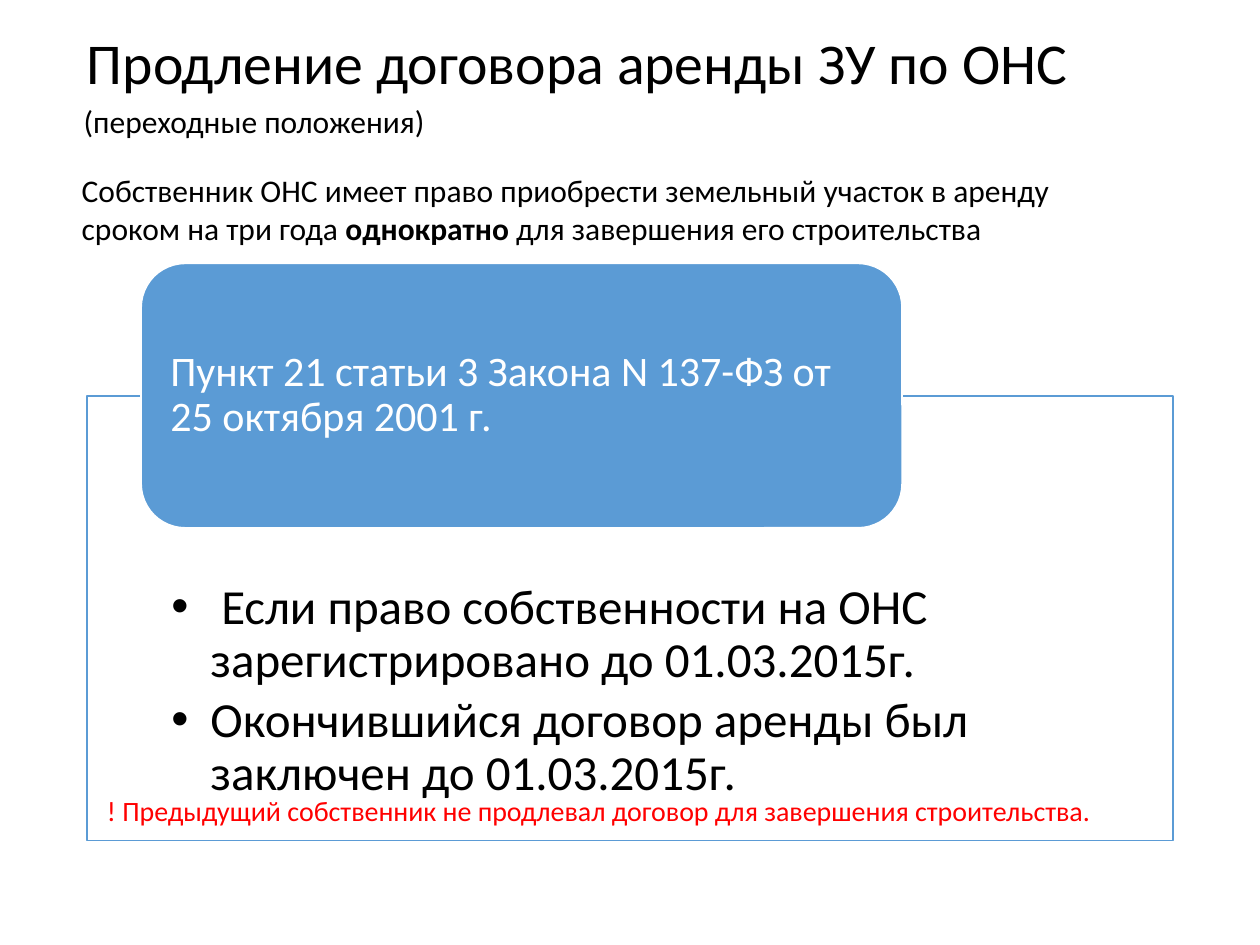
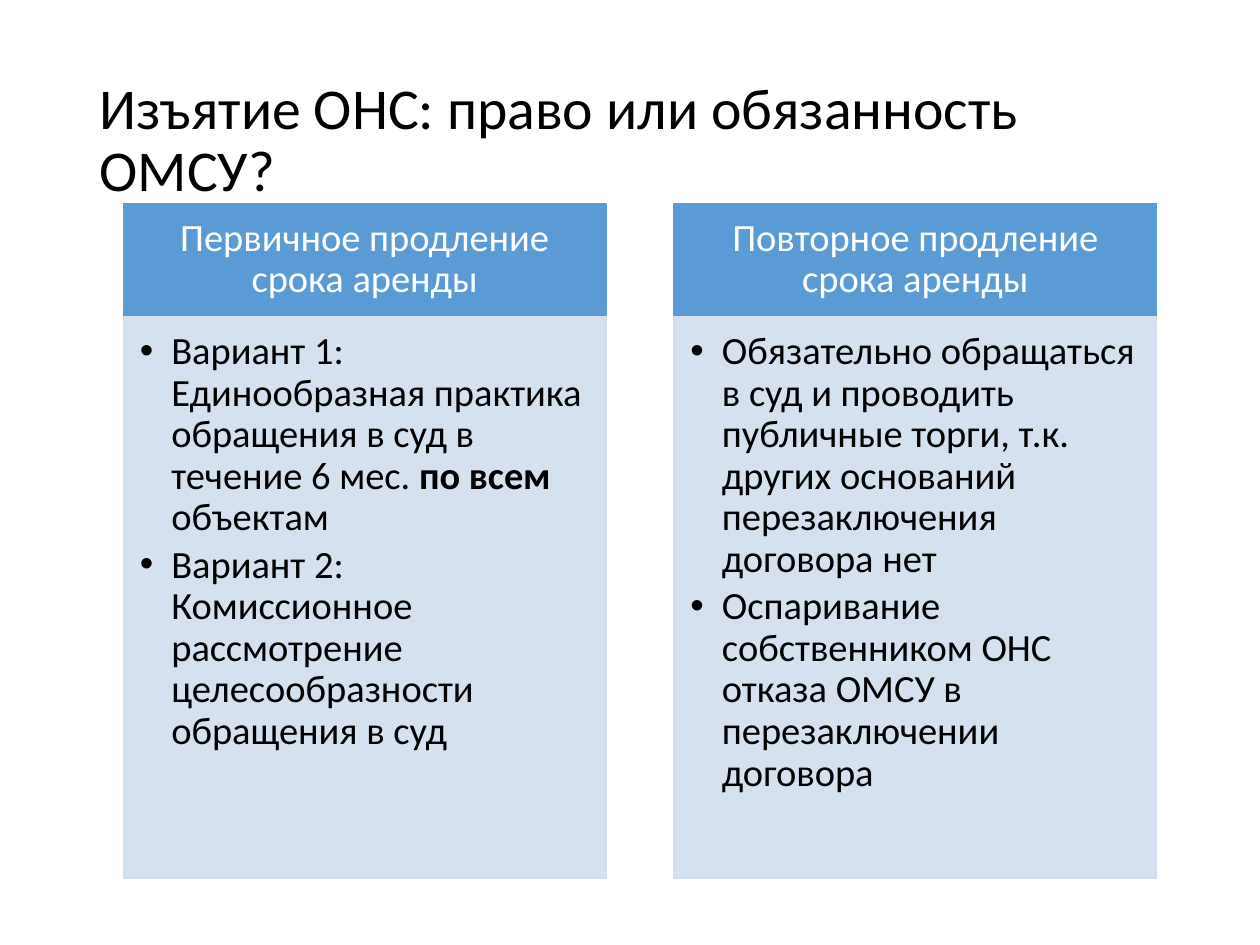
from dataclasses import dataclass
from typing import NamedTuple

from lxml import etree
from pptx import Presentation
from pptx import util as u
from pptx.dml.color import RGBColor
from pptx.enum import shapes, text
from pptx.oxml.ns import qn

FONT = "Calibri"
BLACK, WHITE, RED = "000000", "FFFFFF", "FF0000"
BLUE, PALE = "5B9BD5", "D2DEEF"
COLUMNS, ROWS = 100, 75
LEFT, CENTER = text.PP_ALIGN.LEFT, text.PP_ALIGN.CENTER
TOP, MIDDLE = text.MSO_ANCHOR.TOP, text.MSO_ANCHOR.MIDDLE

deck = Presentation()
deck.slide_width, deck.slide_height = u.Inches(10), u.Inches(7.5)


class Frame(NamedTuple):
    column: float
    row: float
    columns: float
    rows: float


class Span(NamedTuple):
    words: str
    bold: bool = False


Paragraph = list[Span]


@dataclass(frozen=True)
class Style:
    size: float
    color: str = BLACK
    align: text.PP_ALIGN = LEFT
    anchor: text.MSO_ANCHOR = TOP
    insets: tuple[float, float, float, float] = (0.1, 0.05, 0.1, 0.05)
    spacing: float = 0.9
    after: float = 0
    indent: float = 0


@dataclass(frozen=True)
class Card:
    heading: str
    points: list[Paragraph]


TITLE = Style(33, anchor=MIDDLE)
REMARK = Style(18, spacing=1)
WARNING = Style(16, RED, spacing=1)
BADGE = Style(24, WHITE, anchor=MIDDLE, insets=(0.13, 0, 0.13, 0))
CONDITIONS = Style(28, insets=(0.67, 1.48, 0.67, 0.22), after=0.15, indent=0.31)
HEADING = Style(22, WHITE, CENTER, MIDDLE, (0.17, 0.1, 0.17, 0.1))
POINTS = Style(22, insets=(0.13, 0.13, 0.17, 0.19), after=0.15, indent=0.25)


def rgb(color: str) -> RGBColor:
    return RGBColor.from_string(color)


def place(shape, frame: Frame) -> None:
    across, down = deck.slide_width / COLUMNS, deck.slide_height / ROWS
    shape.left, shape.top = round(frame.column * across), round(frame.row * down)
    shape.width, shape.height = round(frame.columns * across), round(frame.rows * down)


def paint(shape, fill: str, line: str, opacity: int = 100) -> None:
    shape.fill.solid()
    shape.fill.fore_color.rgb = rgb(fill)
    shape.line.color.rgb = rgb(line)
    shape.line.width = u.Pt(1)
    if opacity < 100:
        color = shape.fill._xPr.find(qn("a:solidFill")).find(qn("a:srgbClr"))
        etree.SubElement(color, qn("a:alpha"), val=str(opacity * 1000))


def write(shape, paragraphs: list[Paragraph], style: Style) -> None:
    box = shape.text_frame
    box.word_wrap = True
    box.auto_size = text.MSO_AUTO_SIZE.NONE
    box.vertical_anchor = style.anchor
    box.margin_left, box.margin_top, box.margin_right, box.margin_bottom = map(
        u.Inches, style.insets)
    for number, spans in enumerate(paragraphs):
        para = box.add_paragraph() if number else box.paragraphs[0]
        para.alignment = style.align
        para.line_spacing = style.spacing
        para.space_before = u.Pt(0)
        para.space_after = u.Pt(style.size * style.after)
        if style.indent:
            properties = para._p.get_or_add_pPr()
            properties.set("marL", str(u.Inches(style.indent)))
            properties.set("indent", str(-u.Inches(style.indent)))
            etree.SubElement(properties, qn("a:buFont"), typeface="Arial")
            etree.SubElement(properties, qn("a:buChar"), char="•")
        for span in spans:
            run = para.add_run()
            run.text = span.words
            run.font.name = FONT
            run.font.size = u.Pt(style.size)
            run.font.bold = span.bold
            run.font.color.rgb = rgb(style.color)


def start_page(layout: int, title: str, frame: Frame):
    page = deck.slides.add_slide(deck.slide_layouts[layout])
    place(page.shapes.title, frame)
    write(page.shapes.title, [[Span(title)]], TITLE)
    return page


def add_panel(page, index: int, frame: Frame, points: list[Paragraph],
              style: Style, fill: str, line: str) -> None:
    panel = page.placeholders[index]
    place(panel, frame)
    paint(panel, fill, line, 90)
    write(panel, points, style)


def add_block(page, kind: shapes.MSO_SHAPE, frame: Frame, words: str,
              style: Style, line: str) -> None:
    block = page.shapes.add_shape(kind, 0, 0, 0, 0)
    block.shadow.inherit = False
    place(block, frame)
    paint(block, BLUE, line)
    write(block, [[Span(words)]], style)


def add_text(page, frame: Frame, spans: Paragraph, style: Style) -> None:
    box = page.shapes.add_textbox(0, 0, 0, 0)
    place(box, frame)
    write(box, [spans], style)


def build_extension() -> None:
    page = start_page(1, "Продление договора аренды ЗУ по ОНС", Frame(5.9, 1.3, 86.2, 7.8))
    add_panel(page, 1, Frame(6.9, 31.4, 86.2, 35.3), [
        [Span(" Если право собственности на ОНС зарегистрировано до 01.03.2015г.")],
        [Span("Окончившийся договор аренды был заключен до 01.03.2015г.")],
    ], CONDITIONS, WHITE, BLUE)
    add_block(page, shapes.MSO_SHAPE.ROUNDED_RECTANGLE, Frame(11.2, 20.9, 60.4, 21),
              "Пункт 21 статьи 3 Закона N 137-ФЗ от 25 октября 2001 г.", BADGE, WHITE)
    add_text(page, Frame(5.1, 7.6, 87.4, 4), [Span(" (переходные положения)")], REMARK)
    add_text(page, Frame(7.5, 62.5, 83.5, 3.7), [
        Span("! Предыдущий собственник не продлевал договор для завершения строительства."),
    ], WARNING)
    add_text(page, Frame(5.5, 13.1, 87.1, 7.1), [
        Span("Собственник ОНС имеет право приобрести земельный участок в аренду "
             "сроком на три года "),
        Span("однократно", True),
        Span(" для завершения его строительства"),
    ], REMARK)


def build_withdrawal() -> None:
    page = start_page(3, "Изъятие ОНС: право или обязанность ОМСУ?",
                      Frame(6.9, 4, 86.2, 14.5))
    cards = [
        Card("Первичное продление срока аренды", [
            [Span("Вариант 1: Единообразная практика обращения в суд в течение 6 мес. "),
             Span("по всем", True), Span(" объектам")],
            [Span("Вариант 2: Комиссионное рассмотрение целесообразности обращения в суд")],
        ]),
        Card("Повторное продление срока аренды", [
            [Span("Обязательно обращаться в суд и проводить публичные торги, т.к. "
                  "других оснований перезаключения договора нет")],
            [Span("Оспаривание собственником ОНС отказа ОМСУ в перезаключении договора")],
        ]),
    ]
    left, top, width, gap = 9.8, 16.2, 38.3, 5.4
    heading_rows, panel_rows = 8.8, 44.7
    for number, card in enumerate(cards):
        column = left + number * (width + gap)
        add_panel(page, number + 1, Frame(column, top + heading_rows, width, panel_rows),
                  card.points, POINTS, PALE, PALE)
        add_block(page, shapes.MSO_SHAPE.RECTANGLE, Frame(column, top, width, heading_rows),
                  card.heading, HEADING, BLUE)


def main() -> None:
    build_extension()
    build_withdrawal()
    deck.save("out.pptx")


if __name__ == "__main__":
    main()
